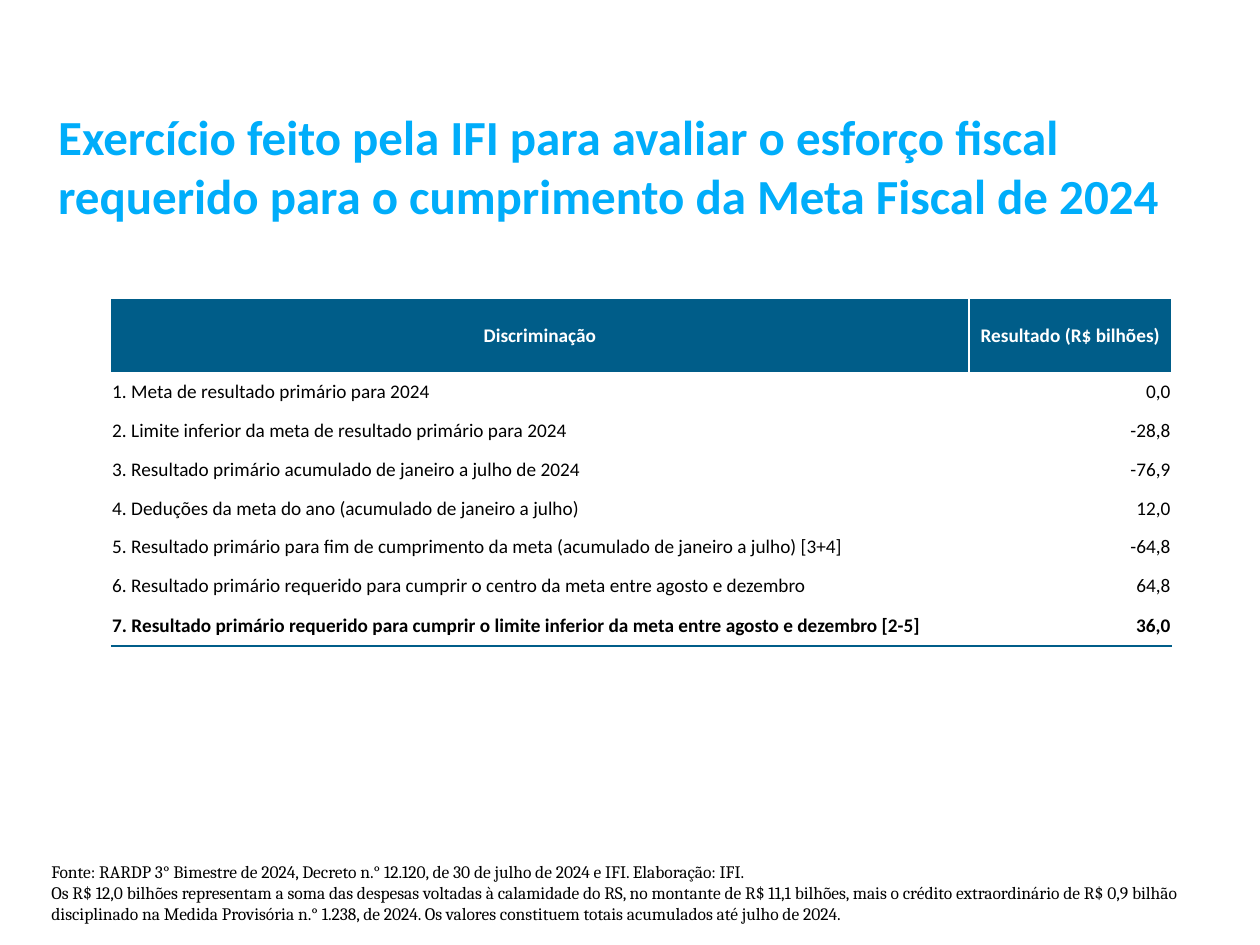
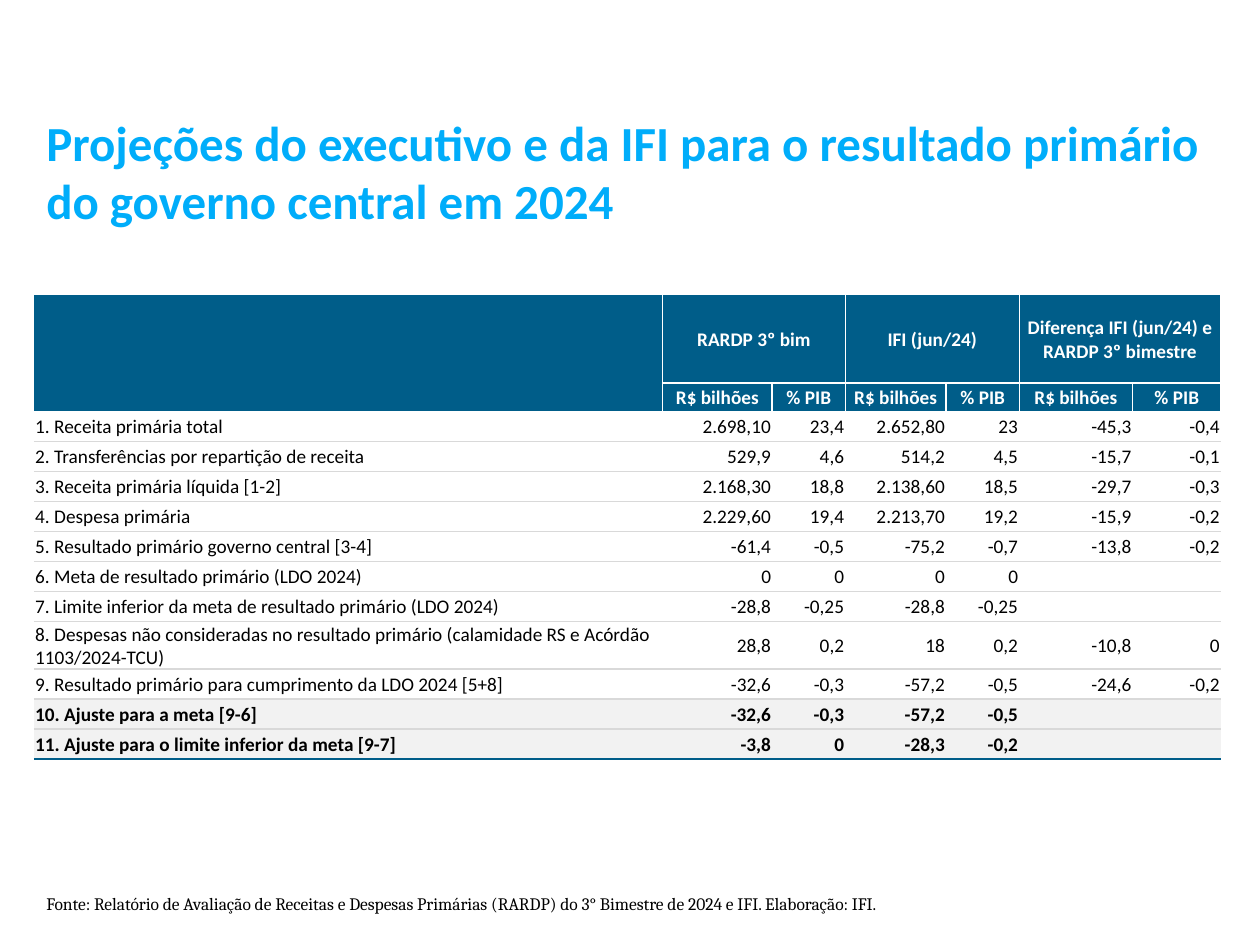
from dataclasses import dataclass

from lxml import etree
from pptx import Presentation
from pptx.dml.color import RGBColor
from pptx.enum.text import MSO_ANCHOR, MSO_AUTO_SIZE, PP_ALIGN
from pptx.oxml.ns import qn
from pptx.util import Pt

LEFT, CENTER, RIGHT = PP_ALIGN.LEFT, PP_ALIGN.CENTER, PP_ALIGN.RIGHT
MIDDLE = MSO_ANCHOR.MIDDLE
GROW = MSO_AUTO_SIZE.SHAPE_TO_FIT_TEXT

COLORS = {
    "title": "00ADFA",
    "header": "005D89",
    "white": "FFFFFF",
    "text": "000000",
    "rule": "D9D9D9",
    "total": "F2F2F2",
}
NO_STYLE = "{2D5ABB26-0587-4C30-8999-92F81FD0307C}"
EDGES = {"left": "a:lnL", "right": "a:lnR", "top": "a:lnT", "bottom": "a:lnB"}
CELL_SIZE = 11


@dataclass(frozen=True)
class Frame:
    left: float
    top: float
    width: float
    height: float


@dataclass(frozen=True)
class TextStyle:
    font: str
    size: float
    color: str
    bold: bool = False


@dataclass(frozen=True)
class FiscalTable:
    left: float
    top: float
    widths: list[float]
    heights: list[float]
    rows: list[list[str]]
    header_rows: int = 1
    bold_rows: int = 1
    column_pairs: tuple[int, ...] = ()
    row_rule: str | None = None
    total_fill: str | None = None


@dataclass(frozen=True)
class FiscalPage:
    title: str
    title_frame: Frame
    source: str
    source_frame: Frame
    table: FiscalTable


TITLE = TextStyle("Calibri", 28, "title", True)
SOURCE = TextStyle("Cambria", 10, "text")

TARGET_ROWS = [
    ["Discriminação", "Resultado (R$ bilhões)"],
    ["1. Meta de resultado primário para 2024", "0,0"],
    ["2. Limite inferior da meta de resultado primário para 2024", "-28,8"],
    ["3. Resultado primário acumulado de janeiro a julho de 2024", "-76,9"],
    ["4. Deduções da meta do ano (acumulado de janeiro a julho)", "12,0"],
    ["5. Resultado primário para fim de cumprimento da meta "
     "(acumulado de janeiro a julho) [3+4]", "-64,8"],
    ["6. Resultado primário requerido para cumprir o centro da meta "
     "entre agosto e dezembro", "64,8"],
    ["7. Resultado primário requerido para cumprir o limite inferior da meta "
     "entre agosto e dezembro [2-5]", "36,0"],
]

PROJECTION_ROWS = [
    ["", "RARDP 3º bim", "", "IFI (jun/24)", "",
     "Diferença IFI (jun/24) e RARDP 3º bimestre", ""],
    [""] + ["R$ bilhões", "% PIB"] * 3,
    ["1. Receita primária total",
     "2.698,10", "23,4", "2.652,80", "23", "-45,3", "-0,4"],
    ["2. Transferências por repartição de receita",
     "529,9", "4,6", "514,2", "4,5", "-15,7", "-0,1"],
    ["3. Receita primária líquida [1-2]",
     "2.168,30", "18,8", "2.138,60", "18,5", "-29,7", "-0,3"],
    ["4. Despesa primária",
     "2.229,60", "19,4", "2.213,70", "19,2", "-15,9", "-0,2"],
    ["5. Resultado primário governo central [3-4]",
     "-61,4", "-0,5", "-75,2", "-0,7", "-13,8", "-0,2"],
    ["6. Meta de resultado primário (LDO 2024)",
     "0", "0", "0", "0", "", ""],
    ["7. Limite inferior da meta de resultado primário (LDO 2024)",
     "-28,8", "-0,25", "-28,8", "-0,25", "", ""],
    ["8. Despesas não consideradas no resultado primário "
     "(calamidade RS e Acórdão 1103/2024-TCU)",
     "28,8", "0,2", "18", "0,2", "-10,8", "0"],
    ["9. Resultado primário para cumprimento da LDO 2024 [5+8]",
     "-32,6", "-0,3", "-57,2", "-0,5", "-24,6", "-0,2"],
    ["10. Ajuste para a meta [9-6]",
     "-32,6", "-0,3", "-57,2", "-0,5", "", ""],
    ["11. Ajuste para o limite inferior da meta [9-7]",
     "-3,8", "0", "-28,3", "-0,2", "", ""],
]

PAGES = [
    FiscalPage(
        "Exercício feito pela IFI para avaliar o esforço fiscal requerido "
        "para o cumprimento da Meta Fiscal de 2024",
        Frame(26.2, 57.6, 667.4, 75),
        "Fonte: RARDP 3° Bimestre de 2024, Decreto n.° 12.120, de 30 de julho "
        "de 2024 e IFI. Elaboração: IFI.\n"
        "Os R$ 12,0 bilhões representam a soma das despesas voltadas à "
        "calamidade do RS, no montante de R$ 11,1 bilhões, mais o crédito "
        "extraordinário de R$ 0,9 bilhão disciplinado na Medida Provisória "
        "n.° 1.238, de 2024. Os valores constituem totais acumulados até "
        "julho de 2024.",
        Frame(22.3, 488.2, 659.5, 43.9),
        FiscalTable(63.4, 170.7, [490.3, 115.9],
                    [41.8] + [22.2] * 6 + [23.5], TARGET_ROWS),
    ),
    FiscalPage(
        "Projeções do executivo e da IFI para o resultado primário do "
        "governo central em 2024",
        Frame(19.4, 60.5, 678.2, 75),
        "Fonte: Relatório de Avaliação de Receitas e Despesas Primárias "
        "(RARDP) do 3° Bimestre de 2024 e IFI. Elaboração: IFI.",
        Frame(19.4, 506.9, 543.6, 19.4),
        FiscalTable(19.4, 168.5, [359.3, 62.6, 41.8, 57.6, 41.8, 64.8, 50.4],
                    [50.4, 16.2] + [17.15] * 11, PROJECTION_ROWS,
                    header_rows=2, bold_rows=2, column_pairs=(1, 3, 5),
                    row_rule="rule", total_fill="total"),
    ),
]


def rgb(name: str) -> RGBColor:
    return RGBColor.from_string(COLORS[name])


def format_text(text_frame, style: TextStyle, align=LEFT) -> None:
    for para in text_frame.paragraphs:
        para.alignment = align
        for span in para.runs:
            span.font.name = style.font
            span.font.size = Pt(style.size)
            span.font.bold = style.bold
            span.font.color.rgb = rgb(style.color)


def add_text(page, frame: Frame, text: str, style: TextStyle) -> None:
    box = page.shapes.add_textbox(Pt(frame.left), Pt(frame.top),
                                  Pt(frame.width), Pt(frame.height))
    box.text_frame.word_wrap = True
    box.text_frame.auto_size = GROW
    box.text_frame.text = text
    format_text(box.text_frame, style)


def set_borders(cell, borders: dict[str, tuple[str, float]]) -> None:
    """Add the edge lines in schema order; call before setting the fill."""
    properties = cell._tc.get_or_add_tcPr()
    for edge, tag in EDGES.items():
        if edge in borders:
            color, width = borders[edge]
            line = etree.SubElement(properties, qn(tag), w=str(Pt(width)))
            fill = etree.SubElement(line, qn("a:solidFill"))
            etree.SubElement(fill, qn("a:srgbClr"), val=COLORS[color])


def cell_borders(data: FiscalTable, row: int,
                 column: int) -> dict[str, tuple[str, float]]:
    if row < data.header_rows:
        white = ("white", 1)
        borders = {"right": white}
        if column:
            borders["left"] = white
            if row:
                borders["top"] = white
            elif data.header_rows > 1:
                borders["bottom"] = white
        return borders
    if row == len(data.rows) - 1:
        return {"bottom": ("header", 1.5)}
    return {"bottom": (data.row_rule, 1)} if data.row_rule else {}


def fill_cell(cell, data: FiscalTable, row: int, column: int) -> None:
    header = row < data.header_rows
    total = row >= len(data.rows) - data.bold_rows
    set_borders(cell, cell_borders(data, row, column))
    fill_name = "header" if header else data.total_fill if total else None
    if fill_name:
        cell.fill.solid()
        cell.fill.fore_color.rgb = rgb(fill_name)
    else:
        cell.fill.background()
    cell.vertical_anchor = MIDDLE
    cell.margin_left = cell.margin_right = cell.margin_top = Pt(0.72)
    cell.margin_bottom = Pt(0)
    text = data.rows[row][column]
    if text:
        cell.text_frame.text = text
        style = TextStyle("Calibri", CELL_SIZE, "white" if header else "text",
                          header or total)
        align = CENTER if header else RIGHT if column else LEFT
        format_text(cell.text_frame, style, align)
    else:
        # An empty cell at the default size would stretch its row
        end = etree.SubElement(cell.text_frame.paragraphs[0]._p,
                               qn("a:endParaRPr"))
        end.set("sz", str(CELL_SIZE * 100))


def add_fiscal_table(page, data: FiscalTable) -> None:
    table = page.shapes.add_table(
        len(data.rows), len(data.widths), Pt(data.left), Pt(data.top),
        Pt(sum(data.widths)), Pt(sum(data.heights))).table
    table.first_row = table.horz_banding = False
    table._tbl.tblPr.find(qn("a:tableStyleId")).text = NO_STYLE
    for column, width in zip(table.columns, data.widths):
        column.width = Pt(width)
    for row, height in zip(table.rows, data.heights):
        row.height = Pt(height)
    for row in range(len(data.rows)):
        for column in range(len(data.widths)):
            fill_cell(table.cell(row, column), data, row, column)
    for first in data.column_pairs:
        table.cell(0, first).merge(table.cell(0, first + 1))


def main() -> None:
    deck = Presentation()
    deck.slide_width, deck.slide_height = Pt(720), Pt(540)
    for content in PAGES:
        page = deck.slides.add_slide(deck.slide_layouts[6])
        add_text(page, content.title_frame, content.title, TITLE)
        add_text(page, content.source_frame, content.source, SOURCE)
        add_fiscal_table(page, content.table)
    deck.save("out.pptx")


if __name__ == "__main__":
    main()
